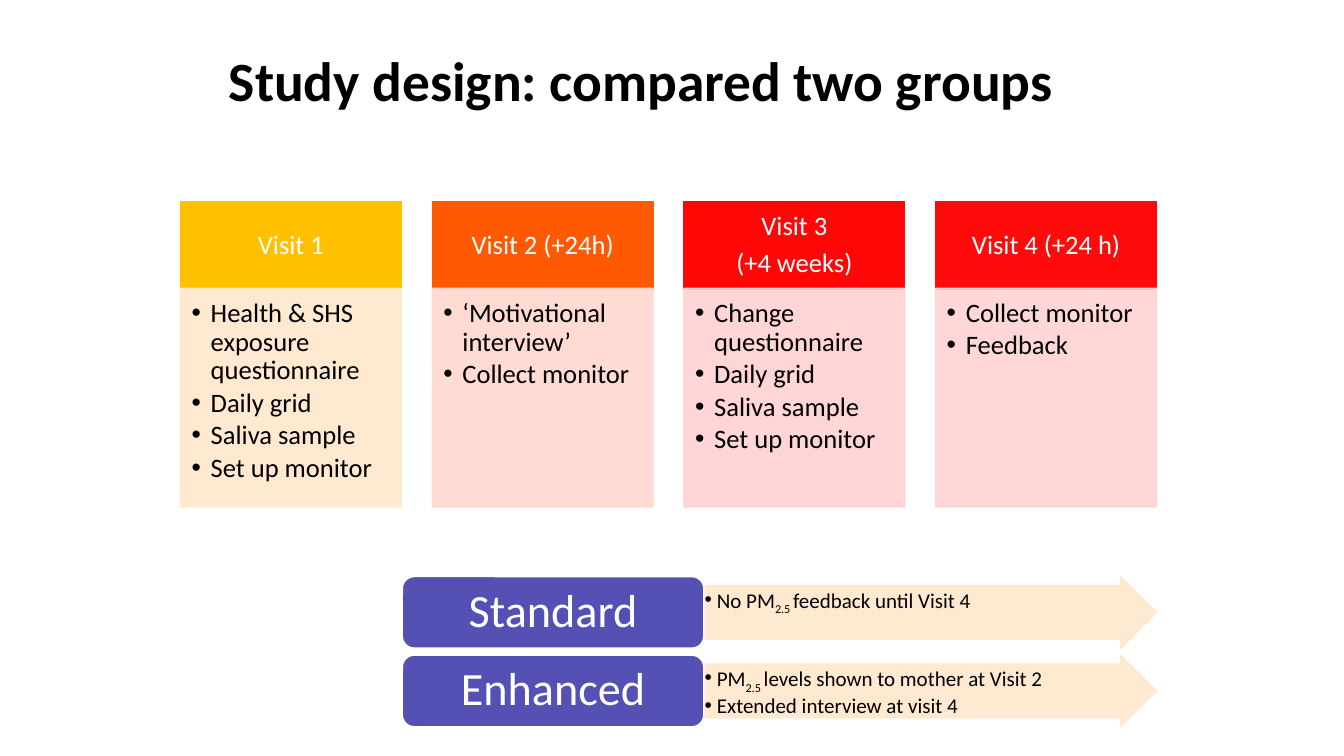
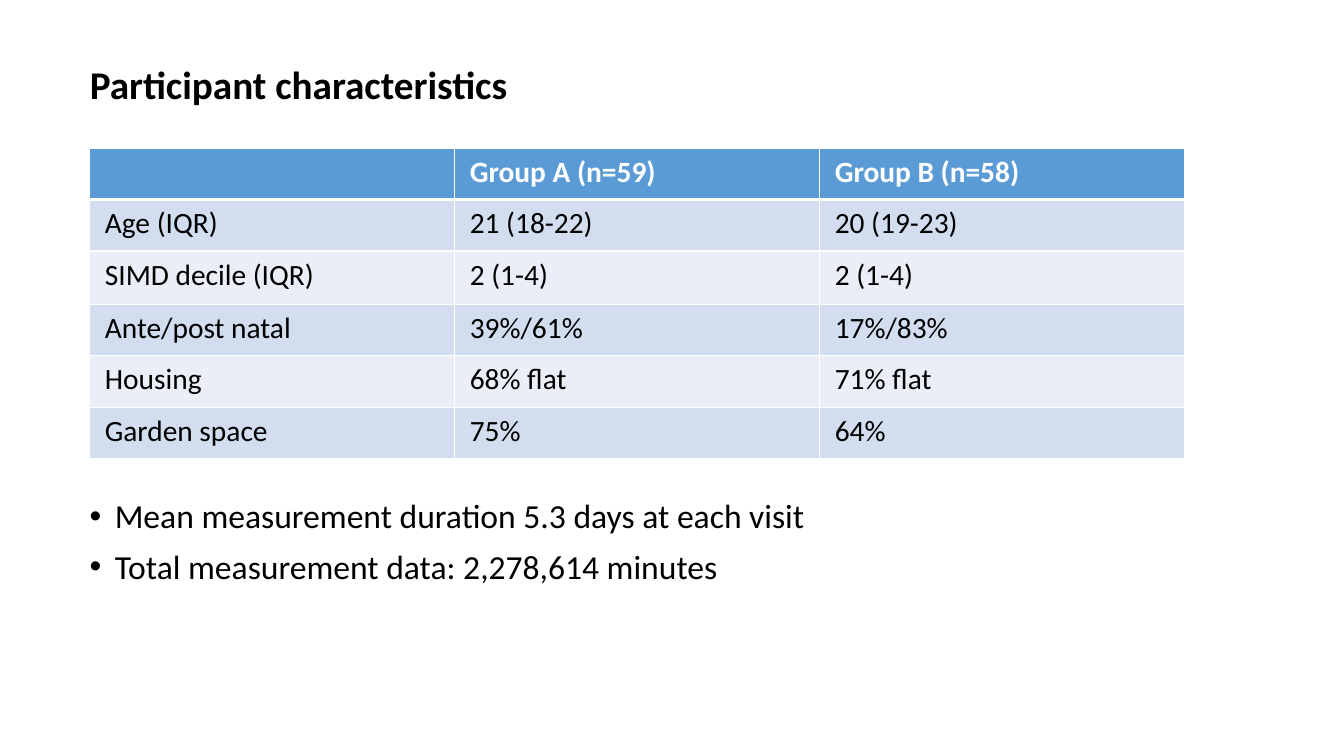
import dataclasses
import typing

import lxml.etree
import pptx
import pptx.dml.color
import pptx.enum.shapes
import pptx.enum.text
import pptx.oxml.ns
import pptx.util

Inches = pptx.util.Inches
Pt = pptx.util.Pt
Shapes = pptx.enum.shapes.MSO_SHAPE
Align = pptx.enum.text.PP_ALIGN
Anchor = pptx.enum.text.MSO_ANCHOR
qn = pptx.oxml.ns.qn


@dataclasses.dataclass(frozen=True)
class Theme:
    font: str = "Calibri"
    text: str = "000000"
    light: str = "FFFFFF"
    arm: str = "5550B4"
    arrow: str = "FFE8CC"
    table_head: str = "5B9BD5"
    table_bands: tuple[str, str] = ("D2DEEF", "EAEFF7")
    main_title_size: float = 39.6
    title_size: float = 28
    visit_size: float = 19
    arm_size: float = 33
    arrow_size: float = 15
    table_size: float = 21
    body_size: float = 24


THEME = Theme()


class Area(typing.NamedTuple):
    left: float
    top: float
    width: float
    height: float

    def lengths(self) -> list[int]:
        return [Inches(value) for value in self]


@dataclasses.dataclass(frozen=True)
class Visit:
    heading: tuple[str, ...]
    tasks: tuple[str, ...]
    strong: str
    pale: str


@dataclasses.dataclass(frozen=True)
class Arm:
    name: str
    points: tuple[str, ...]


VISITS = (
    Visit(("Visit 1",),
          ("Health & SHS exposure questionnaire", "Daily grid", "Saliva sample", "Set up monitor"),
          "FFC000", "FFE8CC"),
    Visit(("Visit 2 (+24h)",), ("‘Motivational interview’", "Collect monitor"),
          "FF5904", "FFD8CF"),
    Visit(("Visit 3", "(+4 weeks)"),
          ("Change questionnaire", "Daily grid", "Saliva sample", "Set up monitor"),
          "FF0707", "FFD1D1"),
    Visit(("Visit 4 (+24 h)",), ("Collect monitor", "Feedback"), "FF0B0B", "FFD3D3"),
)

ARMS = (
    Arm("Standard", ("No PM|2.5 |feedback until Visit 4",)),
    Arm("Enhanced", ("PM|2.5 |levels shown to mother at Visit 2", "Extended interview at visit 4")),
)

CHARACTERISTICS = (
    ("", "Group A (n=59)", "Group B (n=58)"),
    ("Age (IQR)", "21 (18-22)", "20 (19-23)"),
    ("SIMD decile (IQR)", "2 (1-4)", "2 (1-4)"),
    ("Ante/post natal", "39%/61%", "17%/83%"),
    ("Housing", "68% flat", "71% flat"),
    ("Garden space", "75%", "64%"),
)


def rgb(value: str) -> pptx.dml.color.RGBColor:
    return pptx.dml.color.RGBColor.from_string(value)


def write_text(frame, lines: typing.Sequence[str], *, size: float, color: str = THEME.text,
               bold: bool = False, align=Align.LEFT, anchor=Anchor.TOP, line_spacing: float = 0.9,
               before: float = 0, after: float = 0, bullet_indent: float = 0,
               insets: tuple[float, float, float, float] = (0.1, 0.05, 0.1, 0.05)) -> None:
    frame.clear()
    frame.word_wrap = True
    frame.auto_size = pptx.enum.text.MSO_AUTO_SIZE.NONE
    frame.vertical_anchor = anchor
    frame.margin_left, frame.margin_top, frame.margin_right, frame.margin_bottom = map(Inches, insets)
    for index, line in enumerate(lines):
        para = frame.add_paragraph() if index else frame.paragraphs[0]
        para.alignment = align
        para.line_spacing = line_spacing
        para.space_before = Pt(before if index else 0)
        para.space_after = Pt(after)
        if bullet_indent:
            properties = para._p.get_or_add_pPr()
            properties.set("marL", str(Inches(bullet_indent)))
            properties.set("indent", str(-Inches(bullet_indent)))
            lxml.etree.SubElement(properties, qn("a:buFont")).set("typeface", "Arial")
            lxml.etree.SubElement(properties, qn("a:buChar")).set("char", "•")
        for position, part in enumerate(line.split("|")):
            span = para.add_run()
            span.text = part
            span.font.name = THEME.font
            span.font.size = Pt(size)
            span.font.bold = bold
            span.font.color.rgb = rgb(color)
            if position % 2:
                span.font._element.set("baseline", "-25000")


def add_block(page, kind, area: Area, fill: str, *, outline: str = "", opacity: int = 100):
    box = page.shapes.add_shape(kind, *area.lengths())
    box.shadow.inherit = False
    box.fill.solid()
    box.fill.fore_color.rgb = rgb(fill)
    box.line.color.rgb = rgb(outline or fill)
    box.line.width = Pt(1)
    if opacity < 100:
        for color in list(box._element.spPr.iter(qn("a:srgbClr"))):
            lxml.etree.SubElement(color, qn("a:alpha")).set("val", str(opacity * 1000))
    return box


def add_page(deck, title: str, area: Area, size: float):
    page = deck.slides.add_slide(deck.slide_layouts.get_by_name("Title Only"))
    box = page.shapes.title
    box.left, box.top, box.width, box.height = area.lengths()
    write_text(box.text_frame, [title], size=size, bold=True, anchor=Anchor.MIDDLE)
    return page


def add_visit(page, visit: Visit, left: float, width: float) -> None:
    heading = add_block(page, Shapes.RECTANGLE, Area(left, 2, width, 0.87), visit.strong)
    write_text(heading.text_frame, visit.heading, size=THEME.visit_size, color=THEME.light,
               align=Align.CENTER, anchor=Anchor.MIDDLE, after=6.5, insets=(0.15, 0.08, 0.15, 0.08))
    body = add_block(page, Shapes.RECTANGLE, Area(left, 2.86, width, 2.17), visit.pale, opacity=90)
    write_text(body.text_frame, visit.tasks, size=THEME.visit_size, after=2.75,
               bullet_indent=0.19, insets=(0.11, 0.11, 0.15, 0.17))


def add_arm(page, arm: Arm, top: float) -> None:
    arrow = add_block(page, Shapes.RIGHT_ARROW, Area(6.98, top, 4.49, 0.71), THEME.arrow, opacity=90)
    arrow.adjustments[0] = 0.75
    arrow.adjustments[1] = 0.5
    write_text(arrow.text_frame, arm.points, size=THEME.arrow_size, after=2.25,
               bullet_indent=0.12, insets=(0.01, 0.02, 0.2, 0))
    label = add_block(page, Shapes.ROUNDED_RECTANGLE, Area(3.99, top, 2.99, 0.71), THEME.arm,
                      outline=THEME.light)
    write_text(label.text_frame, [arm.name], size=THEME.arm_size, color=THEME.light,
               align=Align.CENTER, anchor=Anchor.MIDDLE)


def set_borders(cell, widths: dict[str, float]) -> None:
    properties = cell._tc.get_or_add_tcPr()
    for side, width in widths.items():
        line = lxml.etree.SubElement(properties, qn(f"a:ln{side}"), w=str(Pt(width)))
        fill = lxml.etree.SubElement(line, qn("a:solidFill"))
        lxml.etree.SubElement(fill, qn("a:srgbClr")).set("val", THEME.light)


def add_characteristics(page, area: Area) -> None:
    rows, columns = len(CHARACTERISTICS), len(CHARACTERISTICS[0])
    table = page.shapes.add_table(rows, columns, *area.lengths()).table
    table.horz_banding = False
    for row, values in enumerate(CHARACTERISTICS):
        table.rows[row].height = Inches(0.53 if row == 2 else 0.51)
        header = row == 0
        for column, value in enumerate(values):
            cell = table.cell(row, column)
            set_borders(cell, {"L": 1, "R": 1, "T": 3 if row == 1 else 1, "B": 3 if header else 1})
            cell.fill.solid()
            cell.fill.fore_color.rgb = rgb(THEME.table_head if header else THEME.table_bands[(row - 1) % 2])
            cell.margin_left = cell.margin_right = Inches(0.15)
            cell.margin_top = cell.margin_bottom = Inches(0.06)
            if value:
                para = cell.text_frame.paragraphs[0]
                span = para.add_run()
                span.text = value
                span.font.name = THEME.font
                span.font.size = Pt(THEME.table_size)
                span.font.bold = header
                span.font.color.rgb = rgb(THEME.light if header else THEME.text)


def add_study_design(deck) -> None:
    page = add_page(deck, "Study design: compared two groups", Area(2.17, 0.5, 9, 0.65),
                    THEME.main_title_size)
    left, right, width = 1.79, 11.47, 2.19
    pitch = (right - left - width) / (len(VISITS) - 1)
    for index, visit in enumerate(VISITS):
        add_visit(page, visit, left + index * pitch, width)
    for index, arm in enumerate(ARMS):
        add_arm(page, arm, 5.72 + index * 0.78)


def add_participants(deck) -> None:
    page = add_page(deck, "Participant characteristics", Area(0.79, 0.5, 11.75, 0.73), THEME.title_size)
    add_characteristics(page, Area(0.89, 1.47, 10.86, 3.08))
    notes = page.shapes.add_textbox(*Area(0.79, 4.91, 11.23, 1.36).lengths())
    write_text(notes.text_frame,
               ["Mean measurement duration 5.3 days at each visit",
                "Total measurement data: 2,278,614 minutes"],
               size=THEME.body_size, before=10, bullet_indent=0.25)


def main() -> None:
    deck = pptx.Presentation()
    deck.slide_width = Inches(13.33)
    deck.slide_height = Inches(7.5)
    add_study_design(deck)
    add_participants(deck)
    deck.save("out.pptx")


if __name__ == "__main__":
    main()
